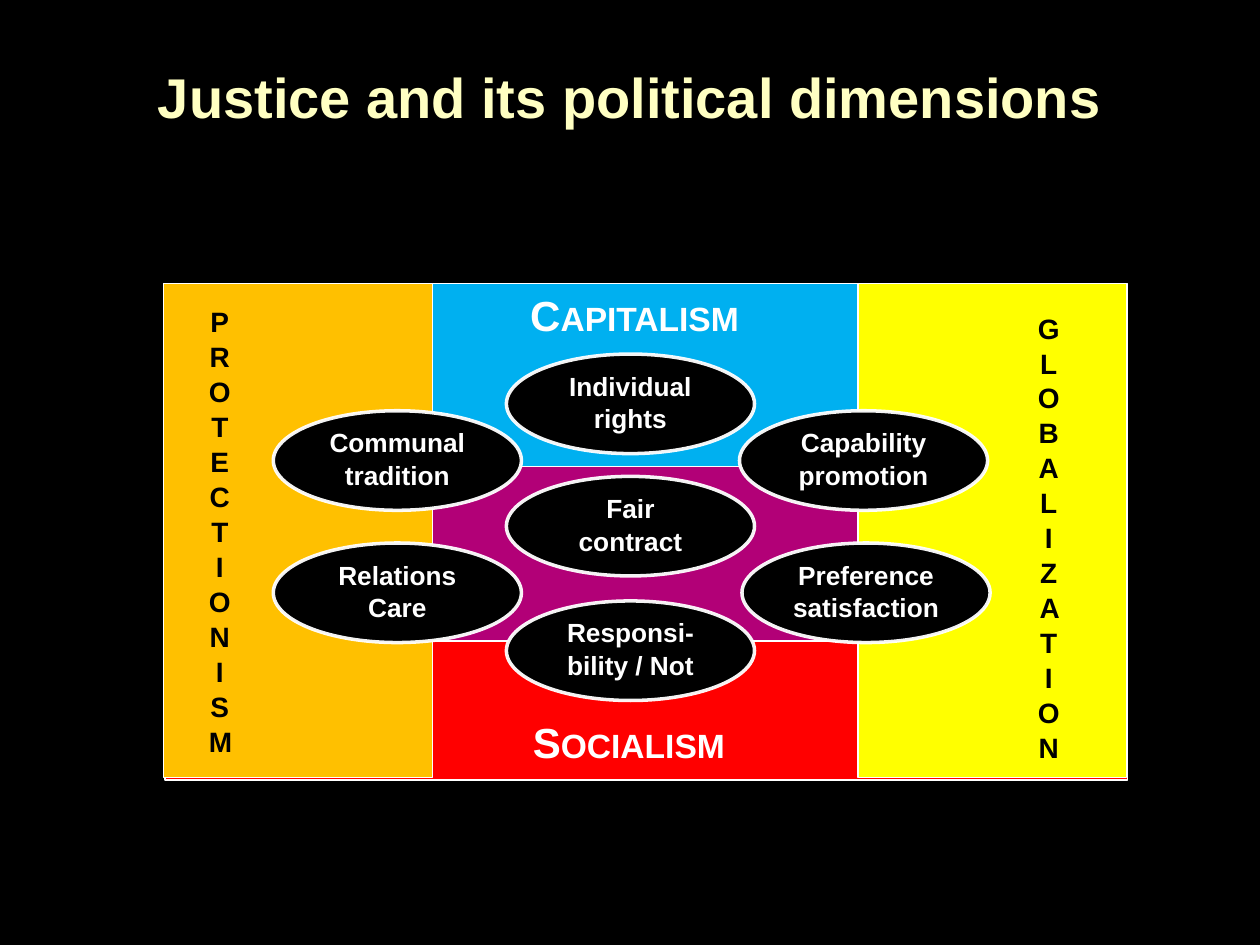
from dataclasses import dataclass

import pptx
import pptx.dml.color
import pptx.enum.shapes
import pptx.enum.text
import pptx.oxml.ns
import pptx.util
from lxml import etree

Pt = pptx.util.Pt
MSO_SHAPE = pptx.enum.shapes.MSO_SHAPE
ANCHOR = pptx.enum.text.MSO_ANCHOR
ALIGN = pptx.enum.text.PP_ALIGN

WHITE, BLACK = "FFFFFF", "000000"
OVAL_W, OVAL_H = 141.8, 56.9


@dataclass
class Field:
    x: float
    y: float
    w: float
    h: float
    color: str


@dataclass
class Theory:
    text: str
    x: float
    y: float


@dataclass
class Label:
    text: str
    x: float
    y: float
    w: float
    h: float
    fmt: dict


def rgb(value: str):
    return pptx.dml.color.RGBColor.from_string(value)


def write(sp, text: str, *, size: float, color: str = WHITE, align=ALIGN.CENTER,
          anchor=ANCHOR.TOP, margin_y: float = 3.6, spacing: float = 1.0,
          small_caps: bool = False) -> None:
    tf = sp.text_frame
    tf.word_wrap = True
    tf.vertical_anchor = anchor
    tf.margin_left = tf.margin_right = Pt(7.2)
    tf.margin_top = tf.margin_bottom = Pt(margin_y)
    p = tf.paragraphs[0]
    p.alignment = align
    p.line_spacing = spacing
    r = p.add_run()
    r.text = text
    r.font.name = "Arial"
    r.font.size = Pt(size)
    r.font.bold = True
    r.font.color.rgb = rgb(color)
    if small_caps:
        r.font._element.set("cap", "small")


def add_shape(s, kind, x: float, y: float, w: float, h: float, fill: str, line: float):
    sp = s.shapes.add_shape(kind, Pt(x), Pt(y), Pt(w), Pt(h))
    sp.shadow.inherit = False
    sp.fill.solid()
    sp.fill.fore_color.rgb = rgb(fill)
    sp.line.color.rgb = rgb(WHITE)
    sp.line.width = Pt(line)
    return sp


def add_field(s, f: Field) -> None:
    add_shape(s, MSO_SHAPE.RECTANGLE, f.x, f.y, f.w, f.h, f.color, 0.75)


def add_theory(s, t: Theory) -> None:
    sp = add_shape(s, MSO_SHAPE.OVAL, t.x, t.y, OVAL_W, OVAL_H, BLACK, 2)
    qn = pptx.oxml.ns.qn
    color = sp.line._ln.find(qn("a:solidFill")).find(qn("a:srgbClr"))
    etree.SubElement(color, qn("a:alpha")).set("val", "94000")
    write(sp, t.text, size=15, margin_y=0, spacing=1.04)


def add_label(s, b: Label) -> None:
    sp = s.shapes.add_textbox(Pt(b.x), Pt(b.y), Pt(b.w), Pt(b.h))
    write(sp, b.text, **b.fmt)


LEFT, MIDDLE, RIGHT = 156.2, 289.4, 422.6
UPPER, LOWER = 234.7, 310.3

FIELDS = [
    Field(94.3, 265.7, 550, 180, "FF0000"),
    Field(94.3, 162, 550, 204.5, "00B0F0"),
    Field(93.6, 266.4, 550, 100, "B20077"),
    Field(93.6, 162, 153.7, 282.2, "FFC000"),
    Field(490.3, 162, 153.4, 282.2, "FFFF00"),
]
THEORIES = [
    Theory("Responsi-bility / Not", MIDDLE, 343.4),
    Theory("Individual rights", MIDDLE, 202.3),
    Theory("Communal tradition", LEFT, UPPER),
    Theory("Preference satisfaction", RIGHT + 1.4, LOWER),
    Theory("Capability promotion", RIGHT, UPPER),
    Theory("Relations Care", LEFT, LOWER),
    Theory("Fair contract", MIDDLE, 272.2),
]
TITLE = dict(size=32, color="FFFFC2", anchor=ANCHOR.MIDDLE)
SYSTEM = dict(size=24, align=ALIGN.LEFT, small_caps=True)
STACKED = dict(size=16, color=BLACK, spacing=1.04)
LABELS = [
    Label("Justice and its political dimensions", 0, 10, 720, 90, TITLE),
    Label("Socialism", 297.4, 406, 133.2, 36, SYSTEM),
    Label("Capitalism", 295.9, 162, 136.8, 36, SYSTEM),
    Label("GLOBALIZATION", 586, 173.5, 26.6, 259.2, STACKED),
    Label("PROTECTIONISM", 112.3, 170, 26.6, 259.2, STACKED),
]


def main() -> None:
    prs = pptx.Presentation()
    prs.slide_width, prs.slide_height = Pt(720), Pt(540)
    s = prs.slides.add_slide(prs.slide_layouts[6])
    s.background.fill.solid()
    s.background.fill.fore_color.rgb = rgb(BLACK)
    for field in FIELDS:
        add_field(s, field)
    for theory in THEORIES:
        add_theory(s, theory)
    for label in LABELS:
        add_label(s, label)
    prs.save("out.pptx")


if __name__ == "__main__":
    main()
